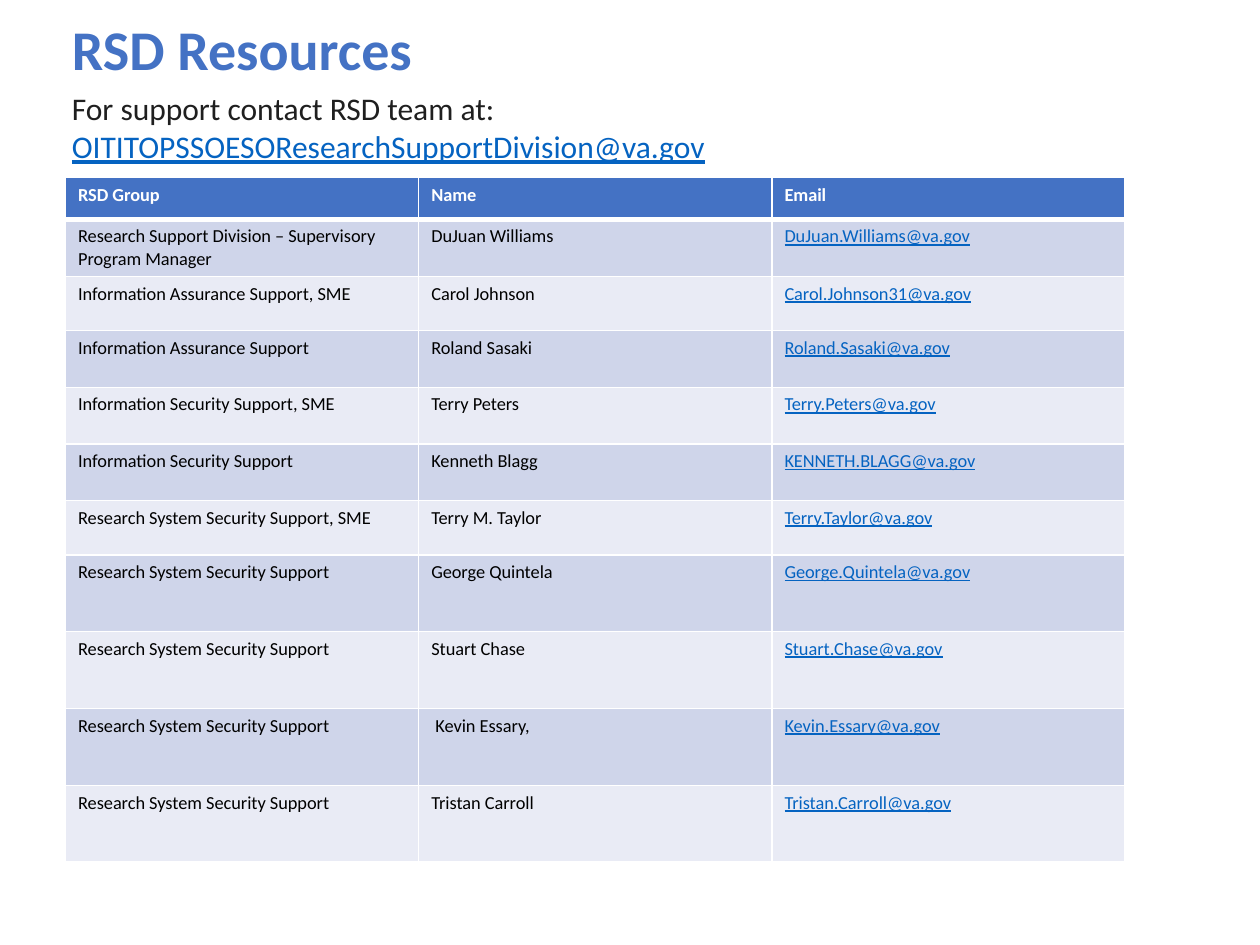
from dataclasses import dataclass
from typing import Any

from lxml import etree
from pptx import Presentation
from pptx import util as u
from pptx.dml.color import RGBColor
from pptx.enum import text
from pptx.oxml.ns import qn

BLUE, LINK, WHITE, BLACK, DARK = "4472C4", "0563C1", "FFFFFF", "000000", "1F1F1F"
BANDS = ("CFD5EA", "E9EBF5")

HEADS = ("RSD Group", "Name", "Email")
STAFF = [
    ("Research Support Division – Supervisory Program Manager",
     "DuJuan Williams", "DuJuan.Williams@va.gov"),
    ("Information Assurance Support, SME", "Carol Johnson", "Carol.Johnson31@va.gov"),
    ("Information Assurance Support", "Roland Sasaki", "Roland.Sasaki@va.gov"),
    ("Information Security Support, SME", "Terry Peters", "Terry.Peters@va.gov"),
    ("Information Security Support", "Kenneth Blagg", "KENNETH.BLAGG@va.gov"),
    ("Research System Security Support, SME", "Terry M. Taylor", "Terry.Taylor@va.gov"),
    ("Research System Security Support", "George Quintela", "George.Quintela@va.gov"),
    ("Research System Security Support", "Stuart Chase", "Stuart.Chase@va.gov"),
    ("Research System Security Support", " Kevin Essary,", "Kevin.Essary@va.gov"),
    ("Research System Security Support", "Tristan Carroll", "Tristan.Carroll@va.gov"),
]
HEIGHTS = [0.33, 0.45, 0.43, 0.45, 0.45, 0.45, 0.43] + [0.61] * 4


def color(code):
    return RGBColor.from_string(code)


def assign(item, values):
    for key, value in values.items():
        setattr(item, key, value)


@dataclass
class Page:
    slide: Any
    face: str = "Calibri"

    def label(self, para, words, size, code, **style):
        run = para.add_run()
        run.text = words
        assign(run.font, dict(name=self.face, size=u.Pt(size), **style))
        run.font.color.rgb = color(code)

    def place(self, holder, box, anchor):
        sides = ("left", "top", "width", "height")
        assign(holder, dict(zip(sides, map(u.Inches, box))))
        assign(holder.text_frame, dict(word_wrap=True, vertical_anchor=anchor,
                                       auto_size=text.MSO_AUTO_SIZE.NONE))
        return holder.text_frame

    def title(self, words, box):
        frame = self.place(self.slide.shapes.title, box, text.MSO_ANCHOR.MIDDLE)
        para = frame.paragraphs[0]
        assign(para, dict(alignment=text.PP_ALIGN.LEFT, line_spacing=0.9))
        self.label(para, words, 32, BLUE, bold=True)

    def body(self, lines, box):
        frame = self.place(self.slide.placeholders[1], box, text.MSO_ANCHOR.TOP)
        for i, (words, code, line) in enumerate(lines):
            para = frame.add_paragraph() if i else frame.paragraphs[0]
            props = para._p.get_or_add_pPr()
            props.set("marL", "0")
            props.set("indent", "0")
            etree.SubElement(props, qn("a:buNone"))
            assign(para, dict(space_before=u.Pt(0), line_spacing=1.0))
            self.label(para, words, 18, code, underline=line)

    def border(self, cell, top, bottom):
        props = cell._tc.get_or_add_tcPr()
        for side, width in zip("LRTB", (1, 1, top, bottom)):
            line = etree.SubElement(props, qn(f"a:ln{side}"), w=str(u.Pt(width)))
            fill = etree.SubElement(line, qn("a:solidFill"))
            etree.SubElement(fill, qn("a:srgbClr"), val=WHITE)

    def table(self, rows, heights, box):
        size = len(rows), len(rows[0])
        grid = self.slide.shapes.add_table(*size, *map(u.Inches, box)).table
        for col in grid.columns:
            col.width = u.Inches(box[2] / size[1])
        for r, (row, height) in enumerate(zip(rows, heights)):
            grid.rows[r].height = u.Inches(height)
            for c, words in enumerate(row):
                cell = grid.cell(r, c)
                # The rule under the heading row is thicker
                self.border(cell, 3 if r == 1 else 1, 3 if r == 0 else 1)
                cell.fill.solid()
                cell.fill.fore_color.rgb = color(BANDS[(r - 1) % 2] if r else BLUE)
                mail = r > 0 and c == 2
                code = LINK if mail else BLACK if r else WHITE
                self.label(cell.text_frame.paragraphs[0], words, 10.5, code,
                           bold=r == 0, underline=mail)


def main():
    deck = Presentation()
    assign(deck, dict(slide_width=u.Inches(10), slide_height=u.Inches(7.5)))
    page = Page(deck.slides.add_slide(deck.slide_layouts[1]))

    # Heading and contact lines
    page.title("RSD Resources", (0.47, 0.04, 8.63, 0.75))
    page.body([
        ("For support contact RSD team at:", DARK, False),
        ("OITITOPSSOESOResearchSupportDivision@va.gov", LINK, True),
    ], (0.47, 0.66, 9.28, 0.75))

    # Staff directory
    page.table([HEADS] + STAFF, HEIGHTS, (0.52, 1.41, 8.41, sum(HEIGHTS)))
    deck.save("out.pptx")


if __name__ == "__main__":
    main()
